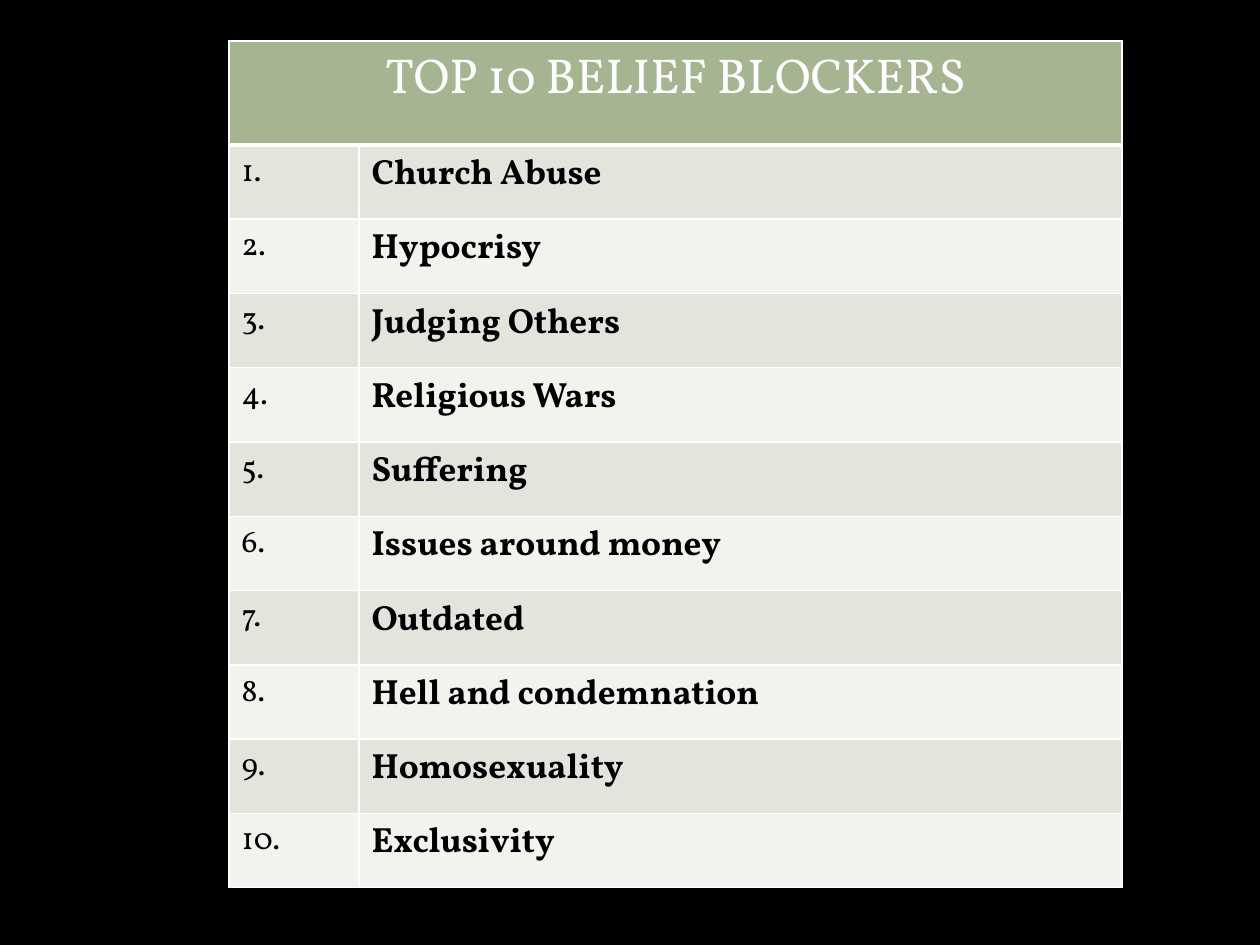
from lxml.etree import SubElement
from pptx import Presentation
from pptx.dml.color import RGBColor
from pptx.enum.text import PP_ALIGN
from pptx.oxml.ns import qn
from pptx.util import Pt

TITLE = "TOP 10 BELIEF BLOCKERS"
BLOCKERS = [
    "Church Abuse",
    "Hypocrisy",
    "Judging Others",
    "Religious Wars",
    "Suffering",
    "Issues around money",
    "Outdated",
    "Hell and condemnation",
    "Homosexuality",
    "Exclusivity",
]

PX = 914400 // 126
WIDTH, HEIGHT = 1260, 945
LEFT, TOP = 229, 41
COLS = (130, 763)
HEAD, BODY = 104, 743

FONT = "Vollkorn"
BLACK = RGBColor(0x00, 0x00, 0x00)
WHITE = RGBColor(0xFF, 0xFF, 0xFF)
GREEN = RGBColor(0xA5, 0xB5, 0x92)
BANDS = (RGBColor(0xE1, 0xE5, 0xDC), RGBColor(0xF0, 0xF3, 0xEE))


def add_borders(cell, base):
    """Draw white lines of 1 pt, with the bottom one base pt wide."""
    props = cell._tc.get_or_add_tcPr()
    for side, size in (("L", 1), ("R", 1), ("T", 1), ("B", base)):
        line = SubElement(props, qn(f"a:ln{side}"), w=str(Pt(size)))
        fill = SubElement(line, qn("a:solidFill"))
        SubElement(fill, qn("a:srgbClr"), val=str(WHITE))


def style(cell, fill, base=1):
    add_borders(cell, base)
    cell.fill.solid()
    cell.fill.fore_color.rgb = fill


def write(cell, text, size, color=BLACK, bold=False):
    cell.text_frame.text = text
    font = cell.text_frame.paragraphs[0].runs[0].font
    font.name, font.size, font.bold = FONT, Pt(size), bold
    font.color.rgb = color


def main():
    prs = Presentation()
    prs.slide_width, prs.slide_height = WIDTH * PX, HEIGHT * PX
    slide = prs.slides.add_slide(prs.slide_layouts[6])
    slide.background.fill.solid()
    slide.background.fill.fore_color.rgb = BLACK

    count = len(BLOCKERS)
    table = slide.shapes.add_table(
        count + 1, len(COLS), LEFT * PX, TOP * PX,
        sum(COLS) * PX, (HEAD + BODY) * PX).table
    for col, width in zip(table.columns, COLS):
        col.width = width * PX
    for row in table.rows:
        row.height = BODY * PX // count
    table.rows[0].height = HEAD * PX

    head = table.cell(0, 0)
    head.merge(table.cell(0, 1))
    for cell in table.rows[0].cells:
        style(cell, GREEN, base=3)
    write(head, TITLE, 28, WHITE)
    head.text_frame.paragraphs[0].alignment = PP_ALIGN.CENTER

    for rank, name in enumerate(BLOCKERS, 1):
        number, label = table.rows[rank].cells
        for cell in (number, label):
            style(cell, BANDS[(rank - 1) % 2])
        write(number, f"{rank}.", 18)
        write(label, name, 20, bold=True)

    prs.save("out.pptx")


if __name__ == "__main__":
    main()
